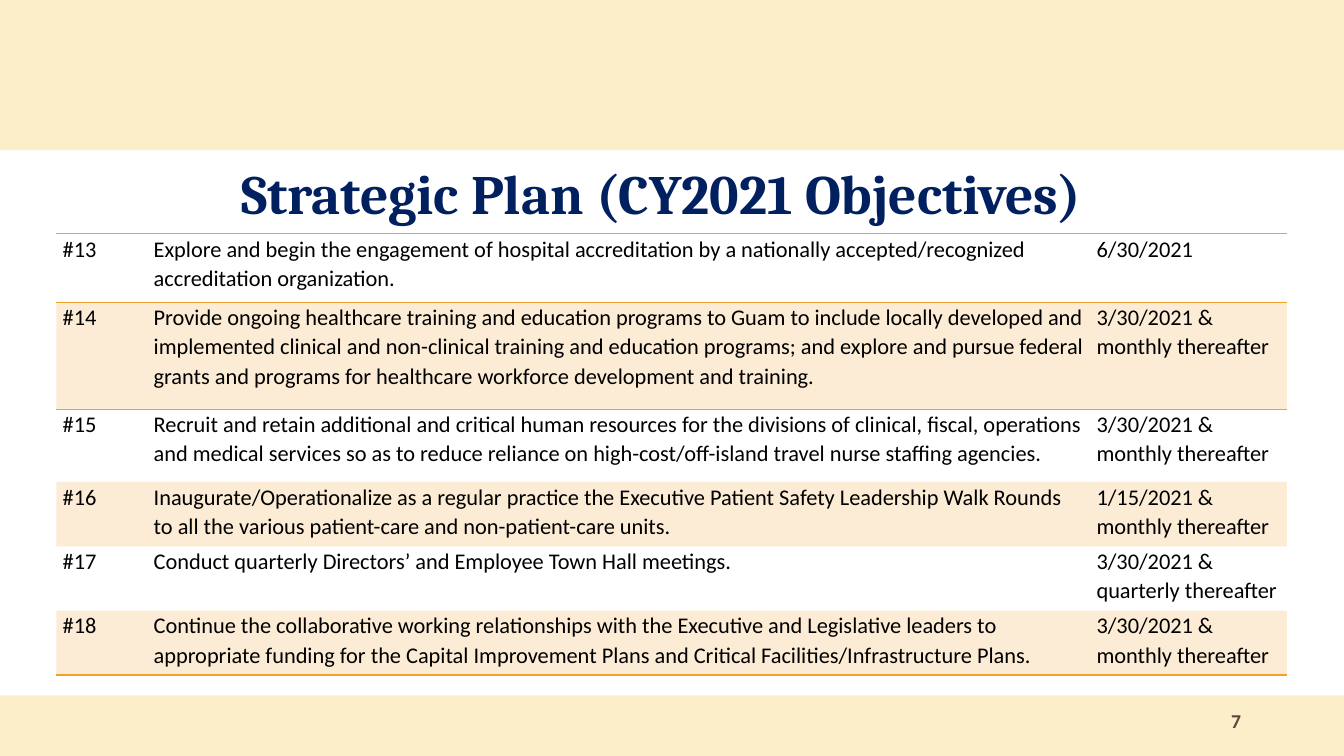
from dataclasses import dataclass

from lxml.etree import SubElement
from pptx import Presentation
from pptx.dml.color import RGBColor
from pptx.enum.shapes import MSO_SHAPE
from pptx.enum.text import MSO_ANCHOR, MSO_AUTO_SIZE, PP_ALIGN
from pptx.oxml import parse_xml
from pptx.oxml.ns import nsdecls, qn
from pptx.slide import Slide
from pptx.table import _Cell
from pptx.text.text import TextFrame
from pptx.util import Pt

COLORS = {
    "band": "FBEEC9",
    "title": "002060",
    "text": "000000",
    "accent": "F0A22E",
    "number": "624139",
}
NO_STYLE = "{2D5ABB26-0587-4C30-8999-92F81FD0307C}"
COLUMN_WIDTHS = (65, 673.5, 140.5)


@dataclass
class Band:
    top: float
    height: float


@dataclass
class Objective:
    number: str
    goal: str
    due: str
    height: float
    borders: tuple[str, ...] = ()


@dataclass
class Style:
    font: str
    size: float
    color: str
    bold: bool = False
    align: PP_ALIGN = PP_ALIGN.LEFT
    spacing: float = 1.0


TITLE = Style("Cambria", 39.6, "title", bold=True)
BODY = Style("Calibri", 16, "text", spacing=1.07)
NUMBER = Style("Calibri", 14, "number", bold=True, align=PP_ALIGN.RIGHT)

BANDS = [Band(496.8, 43.2), Band(-0.72, 108)]

OBJECTIVES = [
    Objective(
        "#13",
        "Explore and begin the engagement of hospital accreditation by a nationally "
        "accepted/recognized accreditation organization.",
        "6/30/2021", 49, ("lnT", "lnB"),
    ),
    Objective(
        "#14",
        "Provide ongoing healthcare training and education programs to Guam to include "
        "locally developed and implemented clinical and non-clinical training and "
        "education programs; and explore and pursue federal grants and programs for "
        "healthcare workforce development and training.",
        "3/30/2021 & monthly thereafter", 76.3, ("lnT",),
    ),
    Objective(
        "#15",
        "Recruit and retain additional and critical human resources for the divisions of "
        "clinical, fiscal, operations and medical services so as to reduce reliance on "
        "high-cost/off-island travel nurse staffing agencies.",
        "3/30/2021 & monthly thereafter", 52,
    ),
    Objective(
        "#16",
        "Inaugurate/Operationalize as a regular practice the Executive Patient Safety "
        "Leadership Walk Rounds to all the various patient-care and non-patient-care units.",
        "1/15/2021 & monthly thereafter", 46,
    ),
    Objective(
        "#17",
        "Conduct quarterly Directors’ and Employee Town Hall meetings.",
        "3/30/2021 & quarterly thereafter", 46,
    ),
    Objective(
        "#18",
        "Continue the collaborative working relationships with the Executive and "
        "Legislative leaders to appropriate funding for the Capital Improvement Plans "
        "and Critical Facilities/Infrastructure Plans.",
        "3/30/2021 & monthly thereafter", 46, ("lnB",),
    ),
]


def color(name: str) -> RGBColor:
    return RGBColor.from_string(COLORS[name])


def write(frame: TextFrame, text: str, style: Style) -> None:
    para = frame.paragraphs[0]
    para.alignment = style.align
    para.line_spacing = style.spacing
    span = para.add_run()
    span.text = text
    span.font.name = style.font
    span.font.size = Pt(style.size)
    span.font.bold = style.bold
    span.font.color.rgb = color(style.color)


def draw_band(page: Slide, band: Band) -> None:
    shape = page.shapes.add_shape(
        MSO_SHAPE.RECTANGLE, Pt(0), Pt(band.top), Pt(960), Pt(band.height)
    )
    shape.shadow.inherit = False
    shape.fill.solid()
    shape.fill.fore_color.rgb = color("band")
    shape.line.fill.background()


def draw_title(page: Slide, text: str) -> None:
    title = page.shapes.title
    title.left, title.top, title.width, title.height = Pt(165), Pt(116), Pt(651), Pt(42.5)
    frame = title.text_frame
    frame.auto_size = MSO_AUTO_SIZE.NONE
    frame.vertical_anchor = MSO_ANCHOR.MIDDLE
    write(frame, text, TITLE)


def fill_cell(cell: _Cell, text: str, shaded: bool, borders: tuple[str, ...]) -> None:
    cell.margin_left = cell.margin_right = Pt(4.5)
    cell.margin_top = cell.margin_bottom = Pt(0)
    write(cell.text_frame, text, BODY)
    properties = cell._tc.get_or_add_tcPr()
    for side in borders:
        properties.append(parse_xml(
            f'<a:{side} {nsdecls("a")} w="{Pt(1)}"><a:solidFill>'
            f'<a:srgbClr val="{COLORS["accent"]}"/></a:solidFill></a:{side}>'
        ))
    if shaded:
        cell.fill.solid()
        cell.fill.fore_color.rgb = color("accent")
        tint = properties.find(qn("a:solidFill")).find(qn("a:srgbClr"))
        SubElement(tint, qn("a:alpha")).set("val", "20000")
    else:
        cell.fill.background()


def draw_objectives(page: Slide, objectives: list[Objective]) -> None:
    table = page.shapes.add_table(
        len(objectives), len(COLUMN_WIDTHS), Pt(40.3), Pt(167),
        Pt(sum(COLUMN_WIDTHS)), Pt(sum(item.height for item in objectives)),
    ).table
    table.first_row = table.horz_banding = False
    table._tbl.tblPr.find(qn("a:tableStyleId")).text = NO_STYLE
    for column, width in zip(table.columns, COLUMN_WIDTHS):
        column.width = Pt(width)
    for index, (row, item) in enumerate(zip(table.rows, objectives)):
        row.height = Pt(item.height)
        for cell, text in zip(row.cells, (item.number, item.goal, item.due)):
            fill_cell(cell, text, index % 2 == 1, item.borders)


def draw_page_number(page: Slide, text: str) -> None:
    box = page.shapes.add_textbox(Pt(635.8), Pt(500.4), Pt(257.8), Pt(28.8))
    frame = box.text_frame
    frame.word_wrap = True
    frame.vertical_anchor = MSO_ANCHOR.MIDDLE
    write(frame, text, NUMBER)


def main() -> None:
    deck = Presentation()
    deck.slide_width, deck.slide_height = Pt(960), Pt(540)
    page = deck.slides.add_slide(deck.slide_layouts[5])
    for band in BANDS:
        draw_band(page, band)
    draw_title(page, "Strategic Plan (CY2021 Objectives)")
    draw_objectives(page, OBJECTIVES)
    draw_page_number(page, "7")
    deck.save("out.pptx")


if __name__ == "__main__":
    main()
